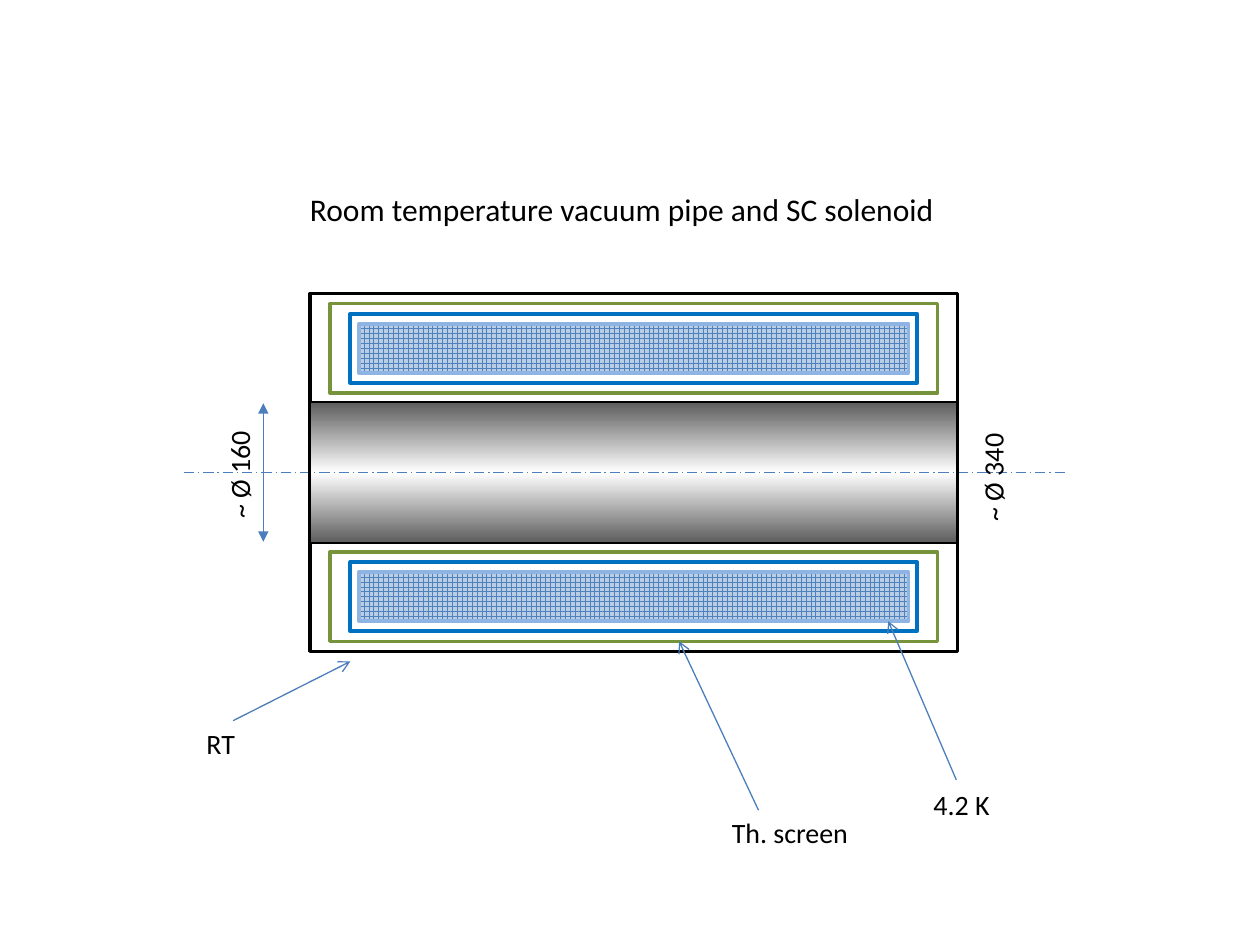
from dataclasses import dataclass
from lxml.etree import SubElement
from pptx import Presentation
from pptx.dml.color import RGBColor as RGB
from pptx.enum.dml import MSO_LINE as Dash, MSO_PATTERN as Pattern
from pptx.enum.shapes import MSO_CONNECTOR as Conn, MSO_SHAPE as Shape
from pptx.enum.text import MSO_ANCHOR as Anchor, MSO_AUTO_SIZE as Fit, PP_ALIGN as Align
from pptx.oxml.ns import qn
from pptx.util import Inches, Pt


@dataclass(frozen=True)
class Theme:
    font: str = "Calibri"
    head: int = 18
    label: int = 16
    ink: str = "000000"
    screen: str = "77933C"
    cold: str = "0070C0"
    coil: str = "8EB4E3"
    grid: str = "4F81BD"
    weave: str = "B9CDE5"
    rule: str = "4B7EBC"
    dark: str = "5F5F5F"
    light: str = "FFFFFF"
    thin: float = 0.75
    edge: float = 1.75
    wall: float = 2


T = Theme()
rgb = RGB.from_string


def add_rect(shapes, box):
    rect = shapes.add_shape(Shape.RECTANGLE, *map(Inches, box))
    rect.shadow.inherit = False
    return rect


def add_line(shapes, start, end, color=T.rule, width=T.thin, dash=None, **tips):
    line = shapes.add_connector(Conn.STRAIGHT, *map(Inches, (*start, *end)))
    line.line.color.rgb = rgb(color)
    line.line.width = Pt(width)
    if dash:
        line.line.dash_style = dash
    pen = line.line._get_or_add_ln()
    for side, kind in tips.items():
        SubElement(pen, qn(f"a:{side}End"), type=kind)
    SubElement(line._element.spPr, qn("a:effectLst"))


def set_text(box, text, size):
    frame = box.text_frame
    frame.text = text
    look = {"word_wrap": True, "auto_size": Fit.NONE, "vertical_anchor": Anchor.TOP}
    for name, value in look.items():
        setattr(frame, name, value)
    para = frame.paragraphs[0]
    para.alignment = Align.LEFT
    for name, value in {"name": T.font, "size": Pt(size)}.items():
        setattr(para.font, name, value)
    para.font.color.rgb = rgb(T.ink)


def add_label(shapes, text, box, turn=0):
    label = shapes.add_textbox(*map(Inches, box))
    label.rotation = turn
    set_text(label, text, T.label)


def place_title(slide, box):
    title = slide.shapes.title
    for name, value in zip(("left", "top", "width", "height"), box):
        setattr(title, name, Inches(value))
    set_text(title, "Room temperature vacuum pipe and SC solenoid", T.head)


def draw_coil(shapes, box):
    """Nest the wall, screen, cold vessel and winding, from outside in."""
    left, top, width, height = box
    layers = [(0, T.ink), (0.16, T.screen), (0.32, T.cold), (0.39, T.coil)]
    for step, (inset, color) in enumerate(layers):
        drop = 0.08 * step
        rect = add_rect(shapes, (left + inset, top + drop,
                                 width - 2 * inset, height - 2 * drop))
        rect.line.color.rgb = rgb(color)
        rect.line.width = Pt(T.wall)
        rect.fill.background()
    rect.fill.patterned()
    rect.fill.pattern = Pattern.LARGE_GRID
    rect.fill.fore_color.rgb = rgb(T.grid)
    rect.fill.back_color.rgb = rgb(T.weave)


def draw_pipe(shapes, box):
    """Shade both halves from a dark wall to a light axis."""
    left, top, width, height = box
    half = height / 2
    for y, angle in ((top, 270), (top + half, 90)):
        rect = add_rect(shapes, (left, y, width, half))
        rect.line.fill.background()
        rect.fill.gradient()
        rect.fill.gradient_angle = angle
        for stop, color in zip(rect.fill.gradient_stops, (T.dark, T.light)):
            stop.color.rgb = rgb(color)
    add_line(shapes, (left - 1, top + half), (left + width + 0.86, top + half),
             dash=Dash.LONG_DASH_DOT)
    for x in (left, left + width):
        add_line(shapes, (x, top), (x, top + height), T.ink, T.edge)


def draw_magnet(slide, box):
    left, top, width, height = box
    shell, bore = 0.87, height - 2 * 0.87
    shapes = slide.shapes.add_group_shape().shapes
    for y in (top, top + height - shell):
        draw_coil(shapes, (left, y, width, shell))
    draw_pipe(shapes, (left, top + shell, width, bore))


def add_notes(slide, box):
    """Point at the layers from below and mark the diameters at the sides."""
    left, top, width, height = box
    base = top + height
    shapes = slide.shapes
    calls = [
        ("RT", (-0.92, 0.55, 0.63), (-0.61, 0.55), (0.32, 0.08)),
        ("Th. screen", (3.25, 1.25, 1.56), (3.56, 1.26), (2.93, -0.08)),
        ("4.2 K", (4.85, 1.03, 0.76), (5.13, 1.02), (4.59, -0.24)),
    ]
    for text, (x, y, wide), start, end in calls:
        ends = [(left + dx, base + dy) for dx, dy in (start, end)]
        add_line(shapes, *ends, tail="arrow")
        add_label(shapes, text, (left + x, base + y, wide, 0.37))
    x = left - 0.37
    add_line(shapes, (x, top + 0.87), (x, base - 0.87),
             head="triangle", tail="triangle")
    for text, x, y in (("~ Ø 160", -1.03, 1.23), ("~ Ø 340", 4.95, 1.25)):
        add_label(shapes, text, (left + x, top + y, 0.94, 0.37), 270)


def main():
    deck = Presentation()
    deck.slide_width, deck.slide_height = Inches(10), Inches(7.5)
    slide = deck.slides.add_slide(deck.slide_layouts[5])
    magnet = (2.46, 2.33, 5.14, 2.84)
    place_title(slide, (2.36, 1.46, 6.14, 0.4))
    draw_magnet(slide, magnet)
    add_notes(slide, magnet)
    deck.save("out.pptx")


if __name__ == "__main__":
    main()
